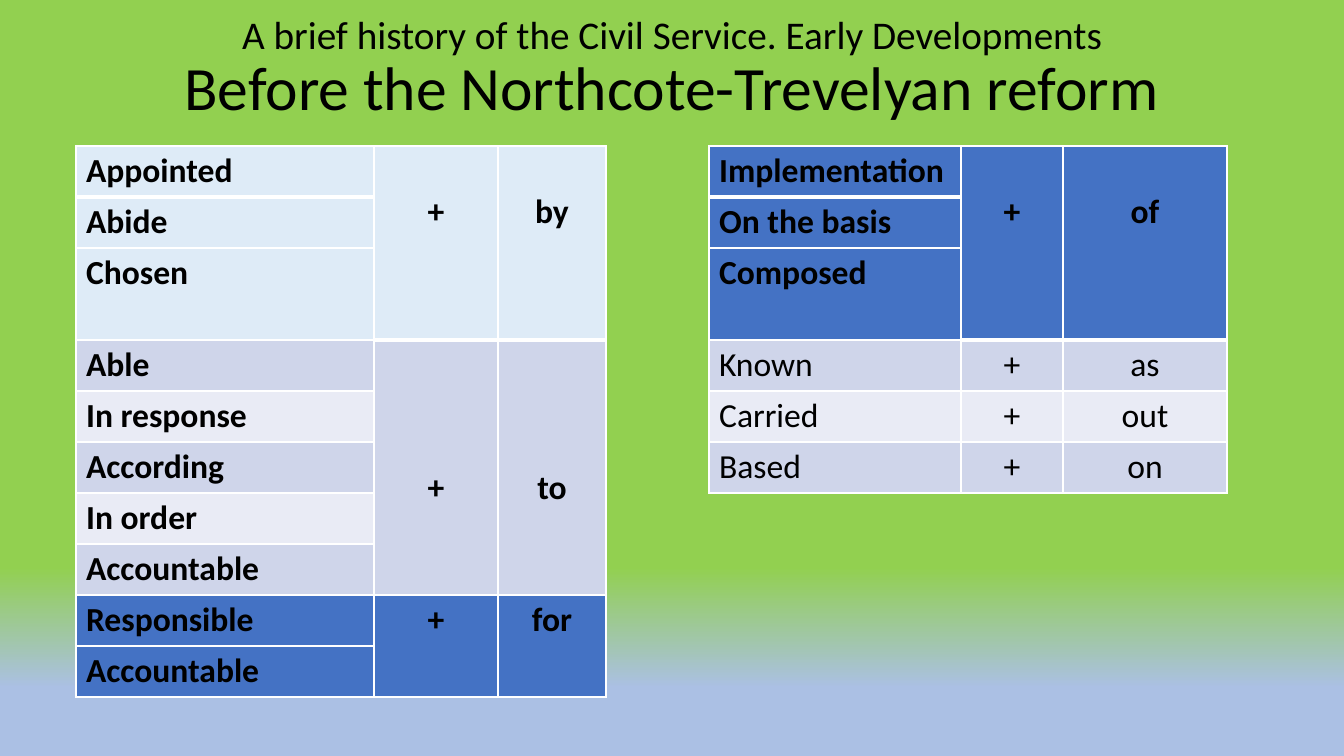
from lxml import etree
from pptx import Presentation
from pptx import util as u
from pptx.dml.color import RGBColor
from pptx.enum import text as t
from pptx.oxml.ns import qn

PX = 914400 / 100.8
COLORS = {"green": "92D050", "sky": "ABC0E4", "pale": "DEEBF7", "lilac": "CFD5EA",
          "mist": "E9EBF5", "blue": "4472C4", "black": "000000", "white": "FFFFFF"}
ROW, LAST_ROW_OF_FIRST_GROUP, LINE = 51, 92, 41


def px(n):
    return u.Emu(round(n * PX))


def write(paragraph, words, size=24, bold=False, align=t.PP_ALIGN.LEFT):
    paragraph.alignment = align
    run = paragraph.add_run()
    run.text = words
    run.font.name = "Calibri"
    run.font.size = u.Pt(size)
    run.font.bold = bold
    run.font.color.rgb = RGBColor.from_string(COLORS["black"])


prs = Presentation()
prs.slide_width, prs.slide_height = px(1344), px(756)
slide = prs.slides.add_slide(prs.slide_layouts[6])

backdrop = slide.background.fill
backdrop.gradient()
backdrop.gradient_angle = 270
stops = next(slide.element.iter(qn("a:gsLst")))
for stop in list(stops):
    stops.remove(stop)
for percent, color in ((75, "green"), (91, "sky"), (100, "sky")):
    stop = etree.SubElement(stops, qn("a:gs"), pos=str(percent * 1000))
    etree.SubElement(stop, qn("a:srgbClr"), val=COLORS[color])

title = slide.shapes.add_textbox(0, px(1), px(1344), px(128)).text_frame
title.word_wrap = True
title.vertical_anchor = t.MSO_ANCHOR.BOTTOM
heading = title.paragraphs[0]
heading.line_spacing = 0.9
write(heading, "A brief history of the Civil Service. Early Developments", size=28,
      align=t.PP_ALIGN.CENTER)
heading.add_line_break()
write(heading, "Before the Northcote-Trevelyan reform", size=44, align=t.PP_ALIGN.CENTER)

word_tables = [
    (76, (298, 124, 108), [
        (["Appointed", "Abide", "Chosen"], "by", ["pale"], 1, True),
        (["Able", "In response", "According", "In order", "Accountable"], "to",
         ["lilac", "mist"], 3, True),
        (["Responsible", "Accountable"], "for", ["blue"], 0, True),
    ]),
    (709, (252, 102, 164), [
        (["Implementation", "On the basis", "Composed"], "of", ["blue"], 1, True),
        (["Known"], "as", ["lilac"], 0, False),
        (["Carried"], "out", ["mist"], 0, False),
        (["Based"], "on", ["lilac"], 0, False),
    ]),
]

for left, widths, groups in word_tables:
    row_count = sum(len(group[0]) for group in groups)
    height = ROW * (row_count - 1) + LAST_ROW_OF_FIRST_GROUP
    grid = slide.shapes.add_table(row_count, 3, px(left), px(146), px(sum(widths)),
                                  px(height)).table
    grid.first_row = grid.horz_banding = False
    for column, width in zip(grid.columns, widths):
        column.width = px(width)
    for row in grid.rows:
        row.height = px(ROW)
    grid.rows[2].height = px(LAST_ROW_OF_FIRST_GROUP)

    first = 0
    for terms, preposition, fills, lines_above, bold in groups:
        for i, term in enumerate(terms):
            for c in range(3):
                cell = grid.cell(first + i, c)
                thick = first == 0 and (i == 0 or c > 0)
                borders = {"lnL": 1, "lnR": 1, "lnB": 3 if thick else 1}
                if first + i == 0:
                    borders = {"lnL": 1, "lnR": 1, "lnT": 1, "lnB": 3}
                for side, points in borders.items():
                    edge = etree.SubElement(cell._tc.get_or_add_tcPr(), qn("a:" + side),
                                            w=str(u.Pt(points)))
                    paint = etree.SubElement(edge, qn("a:solidFill"))
                    etree.SubElement(paint, qn("a:srgbClr"), val=COLORS["white"])
                color = fills[i % len(fills)] if c == 0 else fills[0]
                cell.fill.solid()
                cell.fill.fore_color.rgb = RGBColor.from_string(COLORS[color])
            write(grid.cell(first + i, 0).text_frame.paragraphs[0], term, bold=bold)
        for c, word in ((1, "+"), (2, preposition)):
            cell = grid.cell(first, c)
            if len(terms) > 1:
                cell.merge(grid.cell(first + len(terms) - 1, c))
            cell.margin_top = px(5 + LINE * lines_above)
            write(cell.text_frame.paragraphs[0], word, bold=bold, align=t.PP_ALIGN.CENTER)
        first += len(terms)

prs.save("out.pptx")
